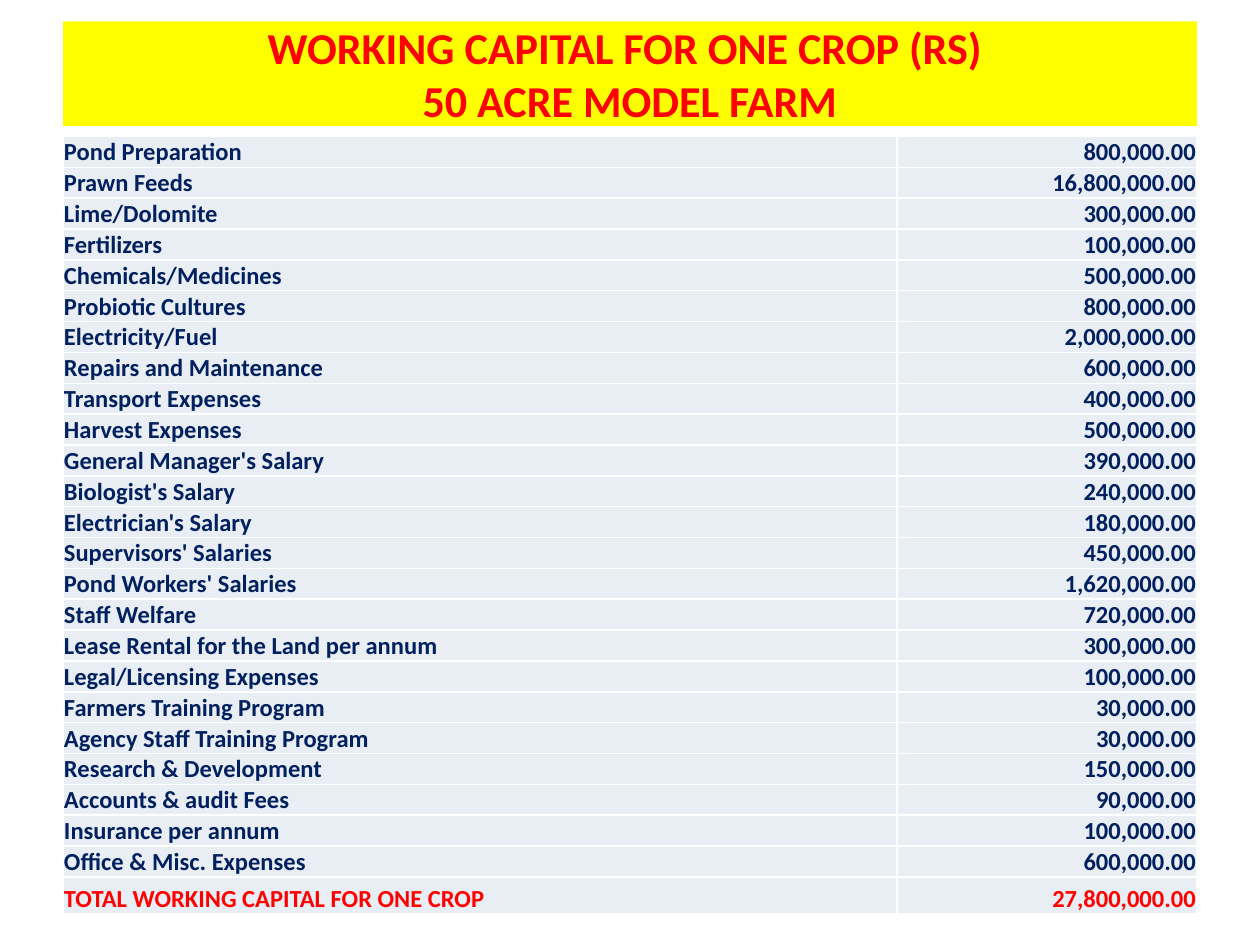
from copy import deepcopy

from lxml import etree
from pptx import Presentation
from pptx import util as u
from pptx.dml.color import RGBColor
from pptx.enum import text
from pptx.oxml.ns import qn

FONT = "Calibri"
RED, NAVY, YELLOW, PALE, WHITE = "FF0000", "002060", "FFFF00", "E9EDF4", "FFFFFF"
LEFT, WIDTH = u.Cm(1.27), u.Cm(22.86)

TITLE = "WORKING CAPITAL FOR ONE CROP (RS) \v50 ACRE MODEL FARM"
EXPENSES = [
    ("Pond Preparation", 800_000),
    ("Prawn Feeds", 16_800_000),
    ("Lime/Dolomite", 300_000),
    ("Fertilizers", 100_000),
    ("Chemicals/Medicines", 500_000),
    ("Probiotic Cultures", 800_000),
    ("Electricity/Fuel", 2_000_000),
    ("Repairs and Maintenance", 600_000),
    ("Transport Expenses", 400_000),
    ("Harvest Expenses", 500_000),
    ("General Manager's Salary", 390_000),
    ("Biologist's Salary", 240_000),
    ("Electrician's Salary", 180_000),
    ("Supervisors' Salaries", 450_000),
    ("Pond Workers' Salaries", 1_620_000),
    ("Staff Welfare", 720_000),
    ("Lease Rental for the Land per annum", 300_000),
    ("Legal/Licensing Expenses", 100_000),
    ("Farmers Training Program", 30_000),
    ("Agency Staff Training Program", 30_000),
    ("Research & Development", 150_000),
    ("Accounts & audit Fees", 90_000),
    ("Insurance per annum", 100_000),
    ("Office & Misc. Expenses", 600_000),
]
TOTAL = ("TOTAL WORKING CAPITAL FOR ONE CROP", 27_800_000)


def paint(color_format, hex_color):
    color_format.rgb = RGBColor.from_string(hex_color)


def fill_solid(target, hex_color):
    target.fill.solid()
    paint(target.fill.fore_color, hex_color)


def format_runs(paragraph, size, hex_color, alignment):
    paragraph.alignment = alignment
    for run in paragraph.runs:
        run.font.name = FONT
        run.font.size = u.Pt(size)
        run.font.bold = True
        paint(run.font.color, hex_color)


def add_heading(slide):
    heading = slide.shapes.title
    heading.left, heading.top = LEFT, u.Cm(0.43)
    heading.width, heading.height = WIDTH, u.Cm(2.11)
    fill_solid(heading, YELLOW)
    frame = heading.text_frame
    frame.text = TITLE
    frame.auto_size = text.MSO_AUTO_SIZE.NONE
    frame.vertical_anchor = text.MSO_ANCHOR.MIDDLE
    frame.margin_top = frame.margin_bottom = 0
    line = frame.paragraphs[0]
    format_runs(line, 25.2, RED, text.PP_ALIGN.CENTER)
    # The line break takes the size of the text around it
    line_break = line._p.find(qn("a:br"))
    line_break.insert(0, deepcopy(line.runs[0]._r.rPr))


def add_borders(cell):
    properties = cell._tc.get_or_add_tcPr()
    for position, side in enumerate(("lnL", "lnR", "lnT", "lnB")):
        border = etree.Element(qn(f"a:{side}"), w=str(u.Pt(1)))
        solid = etree.SubElement(border, qn("a:solidFill"))
        etree.SubElement(solid, qn("a:srgbClr"), val=WHITE)
        properties.insert(position, border)


def fill_cell(cell, content, hex_color, alignment):
    cell.text_frame.text = content
    cell.vertical_anchor = text.MSO_ANCHOR.BOTTOM
    cell.margin_left = cell.margin_right = cell.margin_top = u.Cm(0.02)
    cell.margin_bottom = 0
    fill_solid(cell, PALE)
    add_borders(cell)
    format_runs(cell.text_frame.paragraphs[0], 14, hex_color, alignment)


def add_budget(slide):
    entries = EXPENSES + [TOTAL]
    frame = slide.shapes.add_table(len(entries), 2, LEFT, u.Cm(2.75), WIDTH, u.Cm(15.54))
    budget = frame.table
    budget.first_row = budget.horz_banding = False
    budget.columns[0].width = u.Cm(16.81)
    budget.columns[1].width = WIDTH - u.Cm(16.81)
    for row, (item, amount) in zip(budget.rows, entries):
        is_total = item == TOTAL[0]
        row.height = u.Cm(0.74 if is_total else 0.58)
        hex_color = RED if is_total else NAVY
        fill_cell(row.cells[0], item, hex_color, text.PP_ALIGN.LEFT)
        fill_cell(row.cells[1], f"{amount:,.2f}", hex_color, text.PP_ALIGN.RIGHT)
    frame.height = u.Cm(15.54)


def main():
    deck = Presentation()
    deck.slide_width, deck.slide_height = u.Cm(25.4), u.Cm(19.05)
    slide = deck.slides.add_slide(deck.slide_layouts[5])  # title only
    add_heading(slide)
    add_budget(slide)
    deck.save("out.pptx")


if __name__ == "__main__":
    main()
